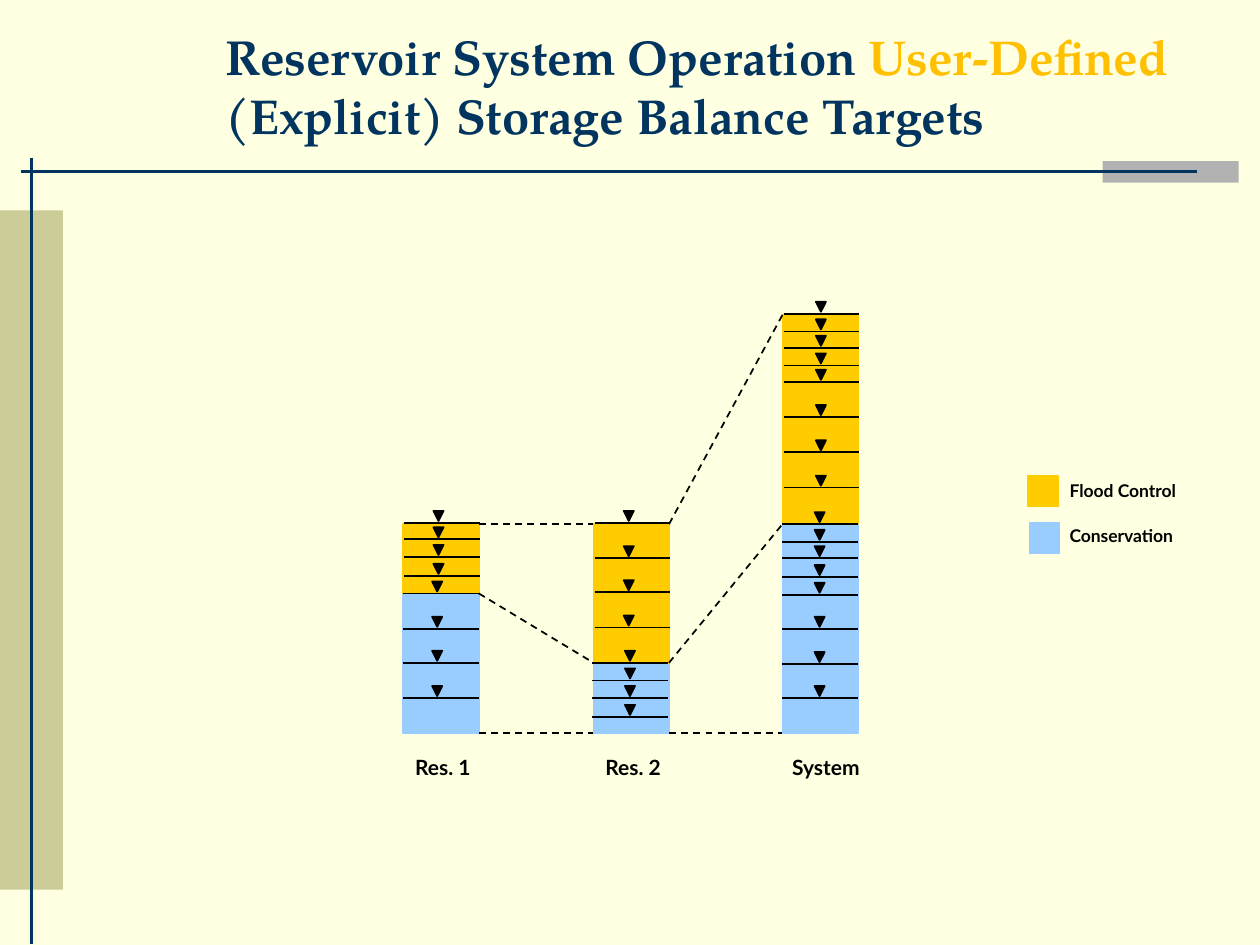
from pptx import Presentation
from pptx.dml.color import RGBColor
from pptx.enum.dml import MSO_LINE
from pptx.enum.shapes import MSO_CONNECTOR, MSO_SHAPE
from pptx.enum.text import MSO_ANCHOR, MSO_AUTO_SIZE, PP_ALIGN
from pptx.oxml.ns import qn
from pptx.util import Inches, Pt
from lxml import etree

RECT, TRI = MSO_SHAPE.RECTANGLE, MSO_SHAPE.ISOSCELES_TRIANGLE
LINE, DASH = MSO_CONNECTOR.STRAIGHT, MSO_LINE.DASH
LEFT, CENTER = PP_ALIGN.LEFT, PP_ALIGN.CENTER
MIDDLE, GROW, NONE = MSO_ANCHOR.MIDDLE, MSO_AUTO_SIZE.SHAPE_TO_FIT_TEXT, MSO_AUTO_SIZE.NONE
rgb = RGBColor.from_string
NAVY, BLACK, GOLD, BLUE = "01345F", "000000", "FFCC00", "99CCFF"

prs = Presentation()
prs.slide_width, prs.slide_height = Inches(10), Inches(7.5)
slide = prs.slides.add_slide(prs.slide_layouts[6])
shapes = slide.shapes
slide.background.fill.solid()
slide.background.fill.fore_color.rgb = rgb("FFFFE1")


def block(kind, box, fill, edge=True):
    shape = shapes.add_shape(kind, *map(Inches, box))
    shape.shadow.inherit = False
    shape.fill.solid()
    shape.fill.fore_color.rgb = rgb(fill)
    if edge:
        shape.line.color.rgb = rgb(fill)
        shape.line.width = Pt(1)
    else:
        shape.line.fill.background()
    return shape


def rule(ends, color=BLACK, width=1, dash=None):
    line = shapes.add_connector(LINE, *map(Inches, ends))
    line.line.color.rgb = rgb(color)
    line.line.width = Pt(width)
    if dash:
        line.line.dash_style = dash
    etree.SubElement(line._element.spPr, qn("a:effectLst"))


# Frame of the slide
block(RECT, (8.75, 1.28, 1.08, 0.17), "B2B2B2", False)
rule((0.17, 1.36, 9.5, 1.36), NAVY, 1.5)
block(RECT, (0, 1.67, 0.5, 5.39), "CCCC99", False)
rule((0.25, 1.25, 0.25, 7.49), NAVY, 1.5)

# Storage bars: left, top, split between flood control and conservation
WIDE, BASE = 0.6, 5.82
bars = [(3.2, 4.16, 4.71), (4.71, 4.16, 5.26), (6.21, 2.5, 4.16)]
for left, top, split in bars:
    block(RECT, (left, split, WIDE, BASE - split), BLUE)
    block(RECT, (left, top, WIDE, split - top), GOLD)

# Dashed links between matching levels of neighbouring bars
for one, two in zip(bars, bars[1:]):
    for start, end in [*zip(one[1:], two[1:]), (BASE, BASE)]:
        rule((one[0] + WIDE, start, two[0], end), dash=DASH)

# Balance levels: line left, marker left, heights
levels = [
    (3.21, 3.44, [4.15, 4.28, 4.42, 4.57]),
    (3.2, 3.43, [4.71, 4.99, 5.26, 5.54]),
    (4.72, 4.95, [4.15, 4.43, 4.7, 4.98]),
    (4.7, 4.96, [5.26, 5.4, 5.54, 5.69]),
    (6.22, 6.475, [2.49, 2.63, 2.76, 2.9, 3.03, 3.31, 3.59, 3.87]),
    (6.21, 6.465, [4.16, 4.3, 4.43, 4.58, 4.72, 4.99, 5.27, 5.54]),
]
for left, mark, heights in levels:
    for y in heights:
        rule((left, y, left + WIDE, y))
        tip = block(TRI, (mark, y - 0.095, 0.08, 0.08), BLACK)
        tip._element.spPr.find(qn("a:xfrm")).set("flipV", "1")

# Legend keys
block(RECT, (8.16, 3.78, 0.24, 0.24), GOLD)
block(RECT, (8.17, 4.15, 0.24, 0.24), BLUE)

# Title, legend text and bar names
head = {"name": "TeX Gyre Pagella", "size": Pt(28), "bold": True}
key = {"name": "Lato", "size": Pt(10), "bold": True}
name = {**key, "size": Pt(12)}
title = [("Reservoir System Operation ", NAVY), ("User-Defined ", "FFC000"),
         ("(Explicit) Storage Balance Targets", NAVY)]
texts = [
    ((1.69, 0.08, 8.31, 1.19), title, head, LEFT, MIDDLE, NONE),
    ((8.39, 3.76, 1.31, 0.27), [("Flood Control", BLACK)], key, LEFT, None, GROW),
    ((8.39, 4.12, 1.31, 0.27), [("Conservation", BLACK)], key, LEFT, None, GROW),
    ((3.08, 5.94, 0.87, 0.3), [("Res. 1", BLACK)], name, CENTER, None, GROW),
    ((4.59, 5.94, 0.87, 0.3), [("Res. 2", BLACK)], name, CENTER, None, GROW),
    ((6.07, 5.94, 0.97, 0.3), [("System", BLACK)], name, CENTER, None, GROW),
]
for box, runs, style, align, anchor, fit in texts:
    frame = shapes.add_textbox(*map(Inches, box)).text_frame
    frame.word_wrap = True
    frame.auto_size = fit
    frame.vertical_anchor = anchor
    para = frame.paragraphs[0]
    para.alignment = align
    for text, color in runs:
        run = para.add_run()
        run.text = text
        run.font.color.rgb = rgb(color)
        for attr, value in style.items():
            setattr(run.font, attr, value)

prs.save("out.pptx")
